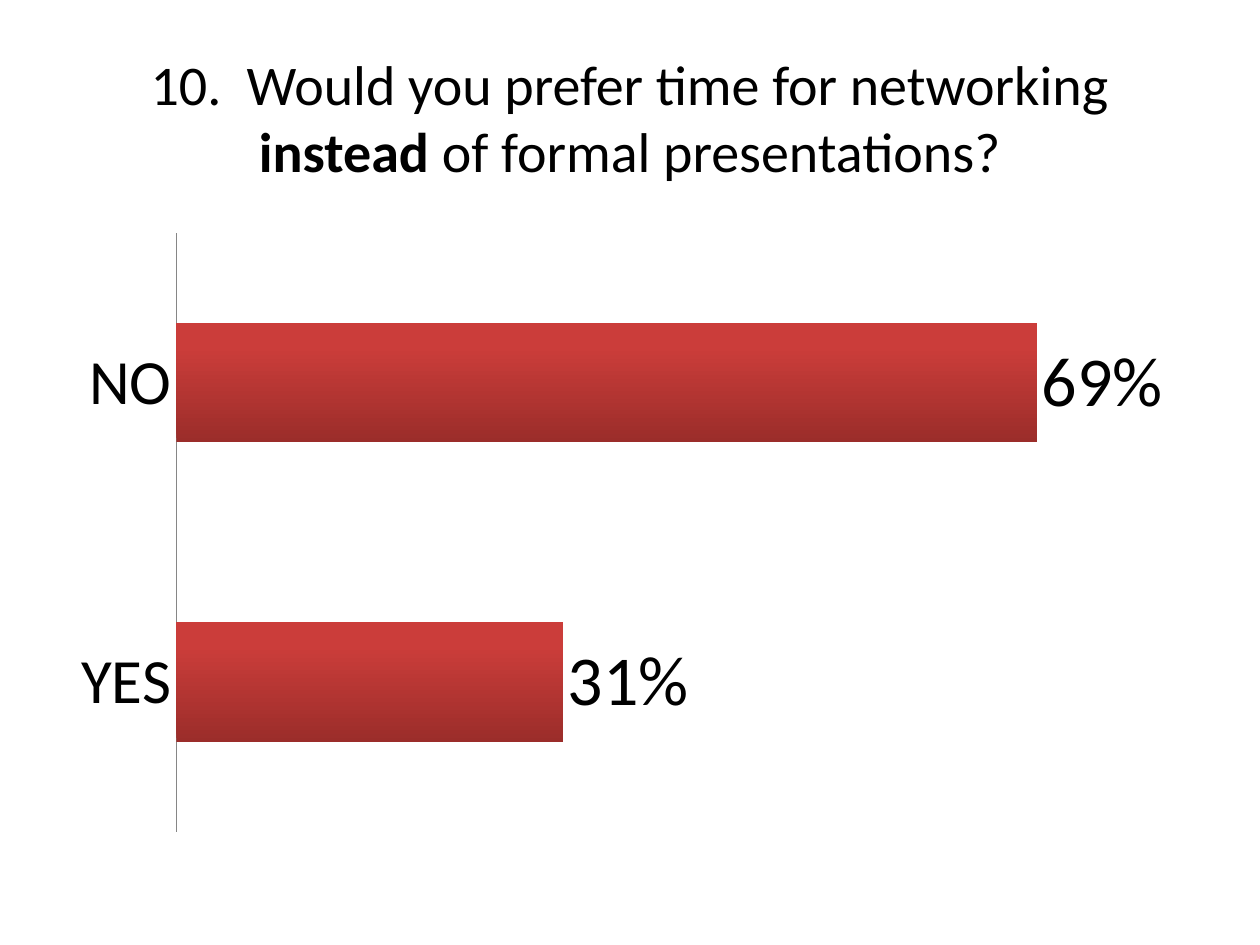
from lxml import etree
from pptx import Presentation
from pptx.chart.data import CategoryChartData
from pptx.dml.color import RGBColor
from pptx.enum.chart import XL_CHART_TYPE, XL_LABEL_POSITION, XL_TICK_MARK
from pptx.enum.text import MSO_ANCHOR, PP_ALIGN
from pptx.oxml.ns import qn
from pptx.util import Inches, Pt

BAR = XL_CHART_TYPE.BAR_CLUSTERED
OUTSIDE_END = XL_LABEL_POSITION.OUTSIDE_END
NO_TICK = XL_TICK_MARK.NONE
MIDDLE = MSO_ANCHOR.MIDDLE
CENTER = PP_ALIGN.CENTER

BLACK = RGBColor(0x00, 0x00, 0x00)
GRAY = RGBColor(0x86, 0x86, 0x86)
DARK_RED = RGBColor(0x9B, 0x2D, 0x2A)
RED = RGBColor(0xCB, 0x3D, 0x3A)
FONT = "Calibri"

TITLE = [
    ("10.  Would you prefer time for networking ", False),
    ("instead", True),
    (" of formal presentations?", False),
]
ANSWERS = {"YES": 0.31, "NO": 0.69}
BAR_GRADIENT = [(0, DARK_RED), (0.8, RED)]
PLOT_LAYOUT = {"x": 0.1, "y": 0.02, "w": 0.88, "h": 0.96}

WIDTH, HEIGHT = Inches(10), Inches(7.5)
LEFT, CONTENT_WIDTH = int(WIDTH * 0.05), int(WIDTH * 0.9)
TITLE_TOP, TITLE_HEIGHT = int(HEIGHT * 0.04), Inches(1.25)
CHART_TOP, CHART_HEIGHT = Inches(1.75), int(HEIGHT * 0.66)


def format_font(font, size, bold=False):
    font.name = FONT
    font.size = Pt(size)
    font.bold = bold
    font.color.rgb = BLACK


def add_title(slide, runs, size=32):
    box = slide.shapes.add_textbox(LEFT, TITLE_TOP, CONTENT_WIDTH, TITLE_HEIGHT)
    tf = box.text_frame
    tf.word_wrap = True
    tf.vertical_anchor = MIDDLE
    p = tf.paragraphs[0]
    p.alignment = CENTER
    for text, bold in runs:
        r = p.add_run()
        r.text = text
        format_font(r.font, size, bold)


def place_plot(chart, shares):
    area = chart.element.chart.plotArea
    for old in area.findall(qn("c:layout")):
        area.remove(old)
    layout = etree.Element(qn("c:layout"))
    manual = etree.SubElement(layout, qn("c:manualLayout"))
    settings = {"layoutTarget": "inner", "xMode": "edge", "yMode": "edge", **shares}
    for tag, value in settings.items():
        etree.SubElement(manual, qn(f"c:{tag}")).set("val", str(value))
    area.insert(0, layout)


def add_answer_chart(slide):
    data = CategoryChartData(number_format="0%")
    data.categories = list(ANSWERS)
    data.add_series("Series 1", list(ANSWERS.values()))
    chart = slide.shapes.add_chart(
        BAR, LEFT, CHART_TOP, CONTENT_WIDTH, CHART_HEIGHT, data
    ).chart
    chart.has_legend = False
    chart.has_title = False
    format_font(chart.font, 18)
    place_plot(chart, PLOT_LAYOUT)

    answers = chart.category_axis
    answers.major_tick_mark = answers.minor_tick_mark = NO_TICK
    answers.format.line.color.rgb = GRAY
    format_font(answers.tick_labels.font, 36)

    share = chart.value_axis
    share.minimum_scale, share.maximum_scale = 0, 0.8
    share.has_major_gridlines = False
    share.visible = False

    plot = chart.plots[0]
    plot.gap_width, plot.overlap = 150, -25
    plot.vary_by_categories = False
    plot.has_data_labels = True
    labels = plot.data_labels
    labels.show_value = True
    labels.number_format = "0%"
    labels.number_format_is_linked = False
    labels.position = OUTSIDE_END
    format_font(labels.font, 40)

    fill = plot.series[0].format.fill
    fill.gradient()
    fill.gradient_angle = 90
    for stop, (position, color) in zip(fill.gradient_stops, BAR_GRADIENT):
        stop.position = position
        stop.color.rgb = color


def main():
    prs = Presentation()
    prs.slide_width, prs.slide_height = WIDTH, HEIGHT
    slide = prs.slides.add_slide(prs.slide_layouts[6])
    add_title(slide, TITLE)
    add_answer_chart(slide)
    prs.save("out.pptx")


if __name__ == "__main__":
    main()
